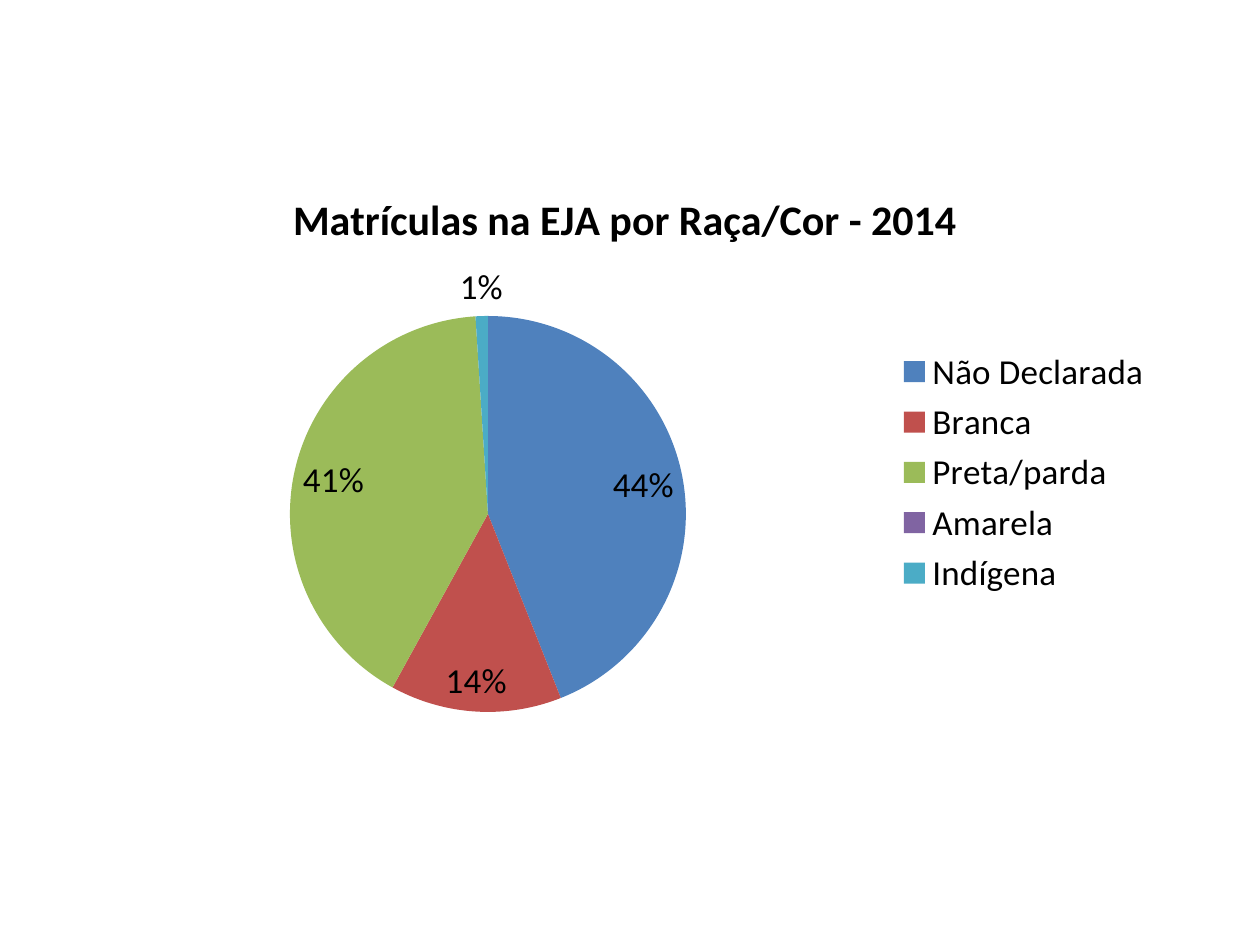
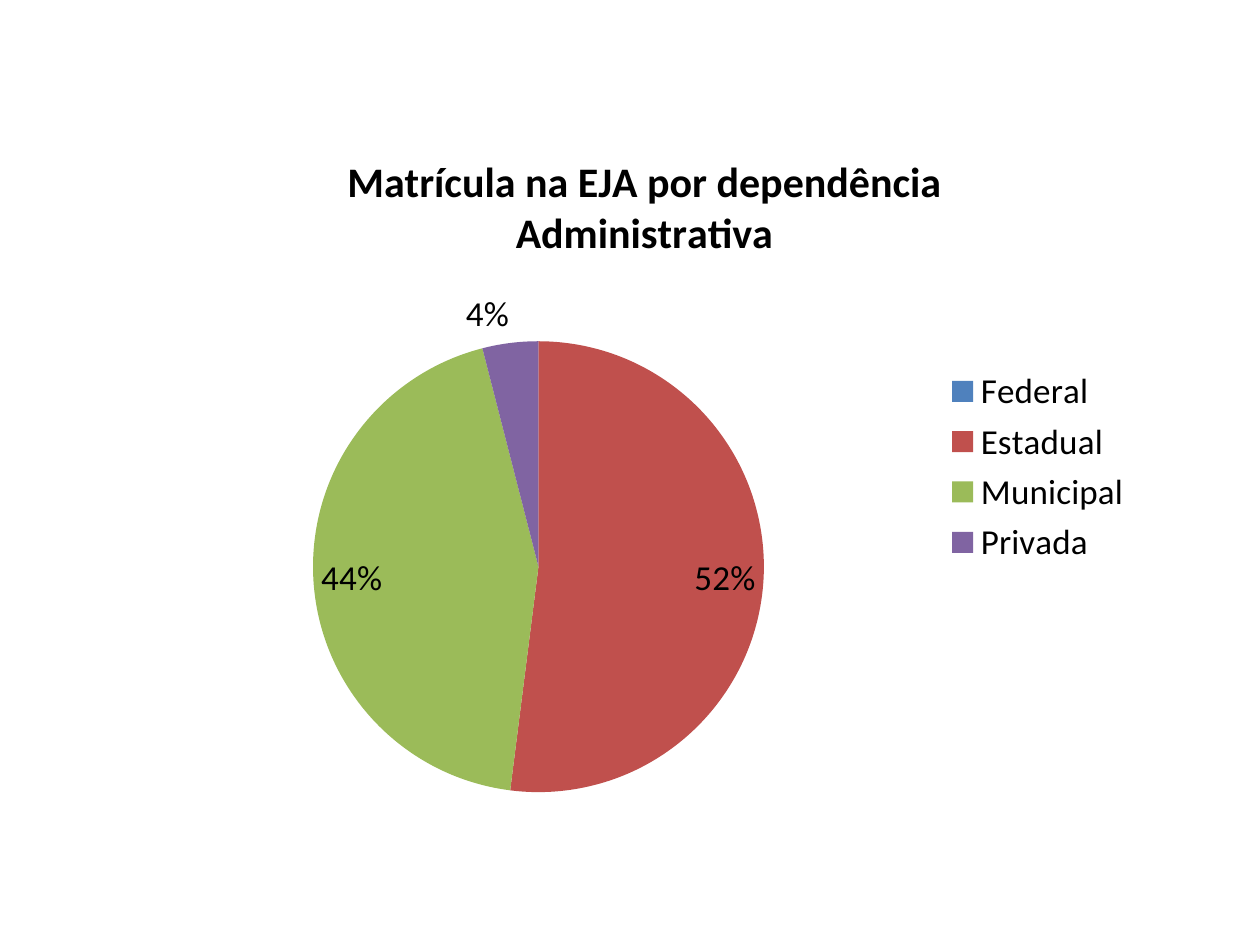
from lxml import etree
from pptx import Presentation
from pptx.chart.data import CategoryChartData
from pptx.dml.color import RGBColor
from pptx.enum.chart import XL_CHART_TYPE, XL_LABEL_POSITION, XL_LEGEND_POSITION
from pptx.oxml.ns import qn
from pptx.util import Pt

PIE = XL_CHART_TYPE.PIE
BEST_FIT = XL_LABEL_POSITION.BEST_FIT
LEGEND_RIGHT = XL_LEGEND_POSITION.RIGHT

# Content: frame is left, top, width, height; pie is left, top, diameter (points)
CHARTS = [
    {
        "title": "Matrículas na EJA por Raça/Cor - 2014",
        "shares": {"Não Declarada": 44, "Branca": 14, "Preta/parda": 41,
                   "Amarela": 0, "Indígena": 1},
        "frame": (48.24, 94.32, 617.76, 351.36),
        "pie": (165.7, 180.6, 226.3),
    },
    {
        "title": "Matrícula na EJA por dependência Administrativa",
        "shares": {"Federal": 0, "Estadual": 52, "Municipal": 44, "Privada": 4},
        "frame": (82.08, 71.28, 572.4, 390.96),
        "pie": (178.9, 195, 257.7),
    },
]

# Shared style
PAGE_SIZE = (720, 540)
FONT = "Calibri"
TEXT_COLOUR = "000000"
TITLE_SIZE, TEXT_SIZE = 24, 20
SLICE_COLOURS = ["4F81BD", "C0504D", "9BBB59", "8064A2", "4BACC6"]


def colour(code):
    return RGBColor.from_string(code)


def style_font(font, size, bold=False):
    font.name = FONT
    font.size = Pt(size)
    font.bold = bold
    font.color.rgb = colour(TEXT_COLOUR)


def place_pie(chart, frame, pie):
    """Fix the pie's place as fractions of the chart frame."""
    left, top, width, height = frame
    pie_left, pie_top, diameter = pie
    settings = {
        "layoutTarget": "inner", "xMode": "edge", "yMode": "edge",
        "x": round((pie_left - left) / width, 4),
        "y": round((pie_top - top) / height, 4),
        "w": round(diameter / width, 4),
        "h": round(diameter / height, 4),
    }
    plot_area = chart.element.find(".//" + qn("c:plotArea"))
    layout = plot_area.find(qn("c:layout"))
    if layout is None:
        layout = etree.Element(qn("c:layout"))
        plot_area.insert(0, layout)
    manual = etree.SubElement(layout, qn("c:manualLayout"))
    for name, value in settings.items():
        etree.SubElement(manual, qn("c:" + name)).set("val", str(value))


def add_pie(page, title, shares, frame, pie):
    data = CategoryChartData()
    data.categories = list(shares)
    data.add_series("Series 1", list(shares.values()))
    box = page.shapes.add_chart(PIE, *[Pt(length) for length in frame], data)
    chart = box.chart
    style_font(chart.font, TEXT_SIZE)

    # Title
    chart.has_title = True
    chart.chart_title.include_in_layout = False
    span = chart.chart_title.text_frame.paragraphs[0].add_run()
    span.text = title
    style_font(span.font, TITLE_SIZE, bold=True)

    # Legend
    chart.has_legend = True
    chart.legend.position = LEGEND_RIGHT
    chart.legend.include_in_layout = False
    style_font(chart.legend.font, TEXT_SIZE)

    # Slices and percentages
    plot = chart.plots[0]
    plot.vary_by_categories = True
    for index in range(len(shares)):
        fill = plot.series[0].points[index].format.fill
        fill.solid()
        fill.fore_color.rgb = colour(SLICE_COLOURS[index])
    plot.has_data_labels = True
    labels = plot.data_labels
    labels.show_percentage = True
    labels.show_value = False
    labels.number_format = "0%"
    labels.number_format_is_linked = False
    labels.position = BEST_FIT
    style_font(labels.font, TEXT_SIZE)
    place_pie(chart, frame, pie)


def main():
    deck = Presentation()
    deck.slide_width, deck.slide_height = [Pt(length) for length in PAGE_SIZE]
    blank = deck.slide_layouts[6]
    for content in CHARTS:
        add_pie(deck.slides.add_slide(blank), **content)
    deck.save("out.pptx")


if __name__ == "__main__":
    main()
